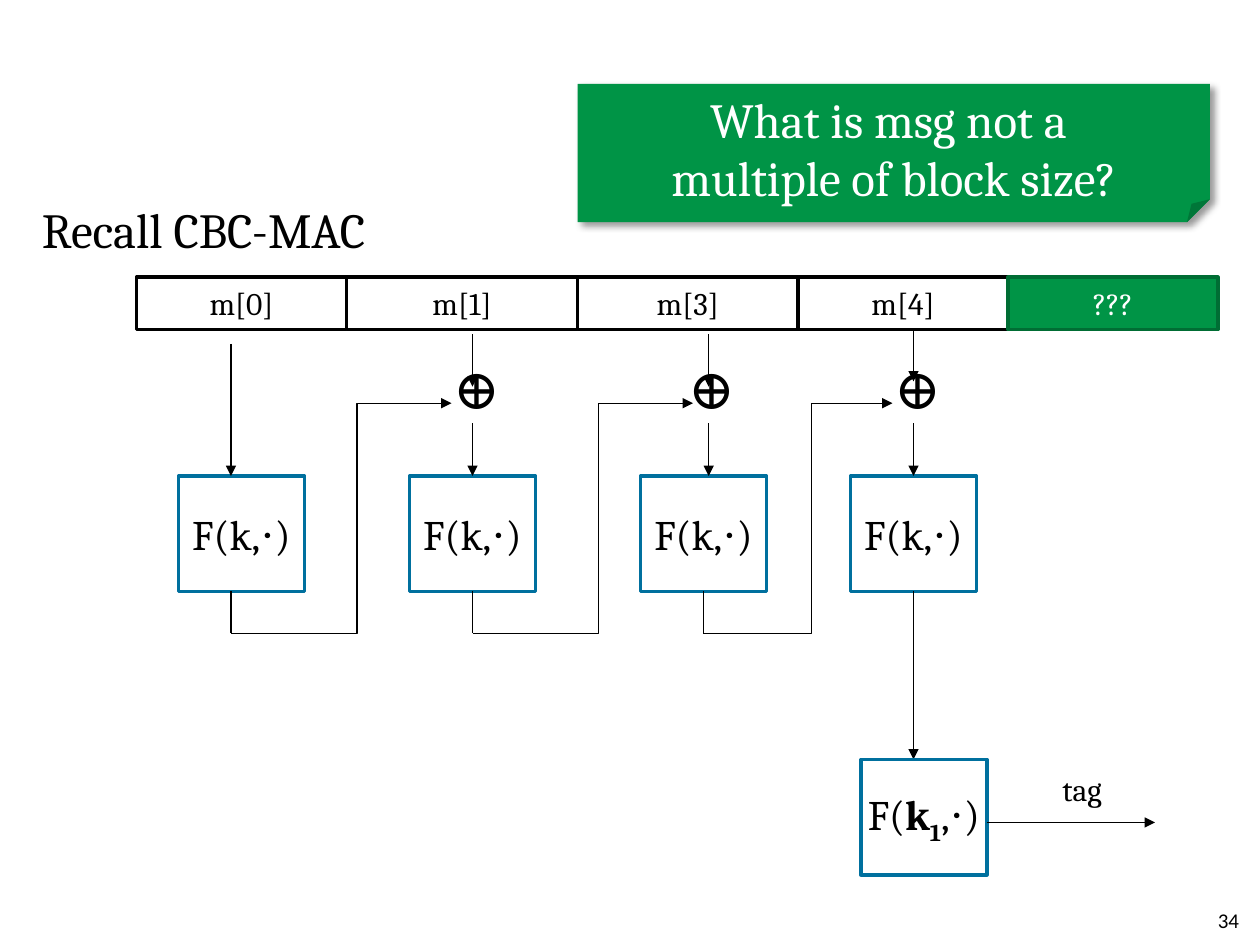
from pptx import Presentation
from pptx.dml.color import RGBColor
from pptx.enum.shapes import MSO_CONNECTOR, MSO_SHAPE
from pptx.enum.text import MSO_ANCHOR, MSO_AUTO_SIZE, PP_ALIGN
from pptx.oxml import parse_xml
from pptx.oxml.ns import nsdecls, qn
from pptx.util import Pt

COLORS = {
    "white": "FFFFFF",
    "black": "000000",
    "blue": "00709E",
    "green": "009446",
    "dark_green": "006D34",
}

BLOCK_WIDTH, BLOCK_HEIGHT = 72, 66
MESSAGE_TOP, MESSAGE_HEIGHT = 158.4, 30
CIPHER_TOP = 272
CIPHER_BOTTOM = CIPHER_TOP + BLOCK_HEIGHT
FEEDBACK_BOTTOM, FEEDBACK_TOP = 362, 230.4
FINAL_LEFT, FINAL_TOP = 492, 434


def color(name):
    return RGBColor.from_string(COLORS[name])


def add_span(para, text, size, tint="black", font="Cambria", bold=False, baseline=0):
    span = para.add_run()
    span.text = text
    span.font.name = font
    span.font.size = Pt(size)
    span.font.bold = bold
    span.font.color.rgb = color(tint)
    if baseline:
        span._r.get_or_add_rPr().set("baseline", str(baseline))


def add_box(page, place, fill="white", outline=None, preset=MSO_SHAPE.RECTANGLE):
    box = page.shapes.add_shape(preset, *map(Pt, place))
    box.shadow.inherit = False
    box.fill.solid()
    box.fill.fore_color.rgb = color(fill)
    if outline:
        box.line.color.rgb = color(outline)
        box.line.width = Pt(2)
    else:
        box.line.fill.background()
    frame = box.text_frame
    frame.word_wrap = outline is None
    frame.vertical_anchor = MSO_ANCHOR.MIDDLE
    para = frame.paragraphs[0]
    para.alignment = PP_ALIGN.CENTER
    return box, para


def add_label(page, place, text, size, inset=True):
    box = page.shapes.add_textbox(*map(Pt, place))
    frame = box.text_frame
    frame.word_wrap = False
    frame.auto_size = MSO_AUTO_SIZE.SHAPE_TO_FIT_TEXT
    if not inset:
        clear_margins(frame)
    add_span(frame.paragraphs[0], text, size)


def clear_margins(frame):
    frame.margin_left = frame.margin_right = Pt(0)
    frame.margin_top = frame.margin_bottom = Pt(0)


def style_line(shape, arrow):
    shape.line.color.rgb = color("black")
    shape.line.width = Pt(0.75)
    if arrow:
        outline = shape._element.spPr.find(qn("a:ln"))
        outline.append(parse_xml(f'<a:tailEnd {nsdecls("a")} type="triangle"/>'))


def add_line(page, start, end, arrow=True):
    line = page.shapes.add_connector(MSO_CONNECTOR.STRAIGHT, *map(Pt, start + end))
    style_line(line, arrow)
    line._element.spPr.append(parse_xml(f'<a:effectLst {nsdecls("a")}/>'))


def add_feedback(page, start, turn, end):
    add_line(page, (start, CIPHER_BOTTOM), (start, FEEDBACK_BOTTOM), arrow=False)
    builder = page.shapes.build_freeform(Pt(start), Pt(FEEDBACK_BOTTOM))
    corners = [(turn, FEEDBACK_BOTTOM), (turn, FEEDBACK_TOP), (end, FEEDBACK_TOP)]
    builder.add_line_segments([(Pt(x), Pt(y)) for x, y in corners], close=False)
    elbow = builder.convert_to_shape()
    elbow.shadow.inherit = False
    elbow.fill.background()
    style_line(elbow, arrow=True)


def add_message_row(page):
    left = 78
    for text, width in [("m[0]", 120), ("m[1]", 132), ("m[3]", 126), ("m[4]", 120), ("???", 120)]:
        unknown = text == "???"
        fill, outline, tint = (
            ("green", "dark_green", "white") if unknown else ("white", "black", "black")
        )
        place = (left, MESSAGE_TOP, width, MESSAGE_HEIGHT)
        box, para = add_box(page, place, fill, outline)
        add_span(para, text, 18, tint)
        left += width


def add_cipher_blocks(page):
    for left in (102, 234, 366, 486):
        place = (left, CIPHER_TOP, BLOCK_WIDTH, BLOCK_HEIGHT)
        box, para = add_box(page, place, outline="blue")
        add_span(para, "F(k,⋅)", 24)


def add_chaining(page):
    add_line(page, (132, 196.5), (132, CIPHER_TOP))
    for gate_left, axis, top in [(252, 270, 191), (386.6, 405, 191), (504, 522, 188)]:
        add_label(page, (gate_left, 198.6, 39.6, 46), "⊕", 32)
        add_line(page, (axis, top), (axis, top + 30))
        add_line(page, (axis, CIPHER_TOP - 30), (axis, CIPHER_TOP))
    for start, turn, end in [(132, 204, 258), (270, 342, 396), (402, 463.7, 510)]:
        add_feedback(page, start, turn, end)


def add_final_stage(page):
    add_line(page, (522, CIPHER_BOTTOM), (522, FINAL_TOP))
    place = (FINAL_LEFT, FINAL_TOP, BLOCK_WIDTH, BLOCK_HEIGHT)
    box, para = add_box(page, place, outline="blue")
    add_span(para, "F(", 24)
    add_span(para, "k", 24, bold=True)
    add_span(para, "1", 24, bold=True, baseline=-25000)
    add_span(para, ",⋅)", 24)
    add_line(page, (FINAL_LEFT + BLOCK_WIDTH, 470), (660, 470))
    add_label(page, (600, 436.3, 39, 29), "tag", 18)


def add_banner(page):
    place = (330, 48, 361.4, 79)
    box, para = add_box(page, place, "green", preset=MSO_SHAPE.FOLDED_CORNER)
    clear_margins(box.text_frame)
    box.text_frame.margin_top = Pt(7.2)
    add_span(para, "What is msg not a ", 28, "white")
    para.add_line_break()
    add_span(para, "multiple of block size?", 28, "white")
    effects = box._element.spPr.find(qn("a:effectLst"))
    effects.append(parse_xml(
        f'<a:outerShdw {nsdecls("a")} blurRad="{Pt(4)}" dist="{Pt(3)}" dir="2700000">'
        f'<a:srgbClr val="{COLORS["black"]}"><a:alpha val="40000"/></a:srgbClr>'
        "</a:outerShdw>"
    ))


def add_page_number(page):
    box = page.shapes.add_textbox(*map(Pt, (540, 511.2, 168, 28.8)))
    frame = box.text_frame
    frame.word_wrap = True
    frame.vertical_anchor = MSO_ANCHOR.MIDDLE
    clear_margins(frame)
    para = frame.paragraphs[0]
    para.alignment = PP_ALIGN.RIGHT
    add_span(para, "34", 12, font="Calibri")


def main():
    deck = Presentation()
    deck.slide_width, deck.slide_height = Pt(720), Pt(540)
    page = deck.slides.add_slide(deck.slide_layouts[6])
    add_cipher_blocks(page)
    add_message_row(page)
    add_chaining(page)
    add_final_stage(page)
    add_banner(page)
    add_label(page, (24, 113.8, 194.4, 33.8), "Recall CBC-MAC", 28, inset=False)
    add_page_number(page)
    deck.save("out.pptx")


if __name__ == "__main__":
    main()
